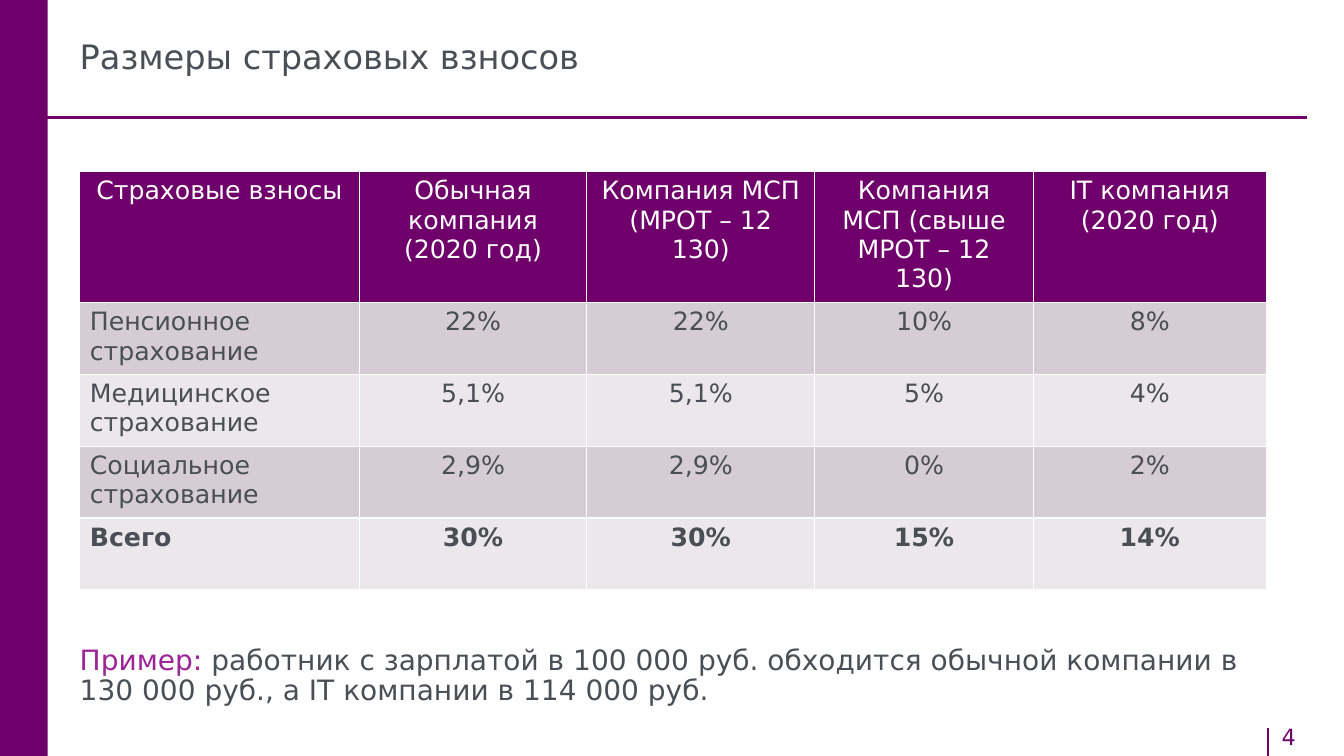
import pptx
import pptx.dml.color
import pptx.enum.shapes
import pptx.enum.text
import pptx.oxml
import pptx.oxml.ns
import pptx.util

Cm = pptx.util.Cm
Pt = pptx.util.Pt
ALIGN = pptx.enum.text.PP_ALIGN
ANCHOR = pptx.enum.text.MSO_ANCHOR

FONT = "DejaVu Sans"
COLORS = {
    "purple": "6F006B",
    "accent": "9C2498",
    "text": "494F55",
    "white": "FFFFFF",
    "band_dark": "D5CCD4",
    "band_light": "EBE7EB",
}
COLUMN_WIDTHS = [7.04, 5.74, 5.74, 5.51, 5.87]
ROW_HEIGHT = 1.81
CONTRIBUTIONS = [
    ["Страховые взносы", "Обычная компания\n(2020 год)", "Компания МСП (МРОТ – 12 130)",
     "Компания МСП (свыше МРОТ – 12 130)", "IT компания (2020 год)"],
    ["Пенсионное страхование", "22%", "22%", "10%", "8%"],
    ["Медицинское страхование", "5,1%", "5,1%", "5%", "4%"],
    ["Социальное страхование", "2,9%", "2,9%", "0%", "2%"],
    ["Всего", "30%", "30%", "15%", "14%"],
]


def rgb(name):
    return pptx.dml.color.RGBColor.from_string(COLORS[name])


def add_span(para, text, color, **formats):
    span = para.add_run()
    span.text = text
    span.font.color.rgb = rgb(color)
    for key, value in {"name": FONT, **formats}.items():
        setattr(span.font, key, value)


def add_text(page, place, spans, size, line_spacing=0.9, margin=0, anchor=ANCHOR.TOP):
    """Add a one-paragraph text box; spans is a list of (text, color)."""
    frame = page.shapes.add_textbox(*map(Cm, place)).text_frame
    formats = {"word_wrap": True, "vertical_anchor": anchor}
    for side in ("left", "top", "right", "bottom"):
        formats["margin_" + side] = Cm(margin)
    for key, value in formats.items():
        setattr(frame, key, value)
    para = frame.paragraphs[0]
    para.line_spacing = line_spacing
    for text, color in spans:
        add_span(para, text, color, size=Pt(size))


def add_bar(page, place):
    bar = page.shapes.add_shape(pptx.enum.shapes.MSO_SHAPE.RECTANGLE, *map(Cm, place))
    bar.shadow.inherit = False
    bar.fill.solid()
    bar.fill.fore_color.rgb = rgb("purple")
    bar.line.fill.background()


def add_rule(page, ends, width):
    rule = page.shapes.add_connector(pptx.enum.shapes.MSO_CONNECTOR.STRAIGHT, *map(Cm, ends))
    rule.line.color.rgb = rgb("purple")
    rule.line.width = Pt(width)
    properties = rule._element.spPr
    properties.append(pptx.oxml.parse_xml(f"<a:effectLst {pptx.oxml.ns.nsdecls('a')}/>"))


def add_borders(cell):
    properties = cell._tc.get_or_add_tcPr()
    for index, side in enumerate(("lnL", "lnR", "lnT", "lnB")):
        properties.insert(index, pptx.oxml.parse_xml(
            f'<a:{side} {pptx.oxml.ns.nsdecls("a")} w="{Pt(1)}"><a:solidFill>'
            f'<a:srgbClr val="{COLORS["white"]}"/></a:solidFill></a:{side}>'))


def fill_cell(cell, text, fill, color, bold, align):
    cell.fill.solid()
    cell.fill.fore_color.rgb = rgb(fill)
    add_borders(cell)
    frame = cell.text_frame
    for index, line in enumerate(text.split("\n")):
        para = frame.add_paragraph() if index else frame.paragraphs[0]
        para.alignment = align
        add_span(para, line, color, size=Pt(18), bold=bold)


def add_contributions_table(page, left, top):
    count = len(CONTRIBUTIONS)
    table = page.shapes.add_table(
        count, len(COLUMN_WIDTHS), Cm(left), Cm(top),
        Cm(sum(COLUMN_WIDTHS)), Cm(ROW_HEIGHT * count)).table
    for column, width in zip(table.columns, COLUMN_WIDTHS):
        column.width = Cm(width)
    for row, texts in enumerate(CONTRIBUTIONS):
        table.rows[row].height = Cm(ROW_HEIGHT)
        header = row == 0
        band = "band_dark" if row % 2 else "band_light"
        for column, text in enumerate(texts):
            fill_cell(
                table.cell(row, column), text,
                fill="purple" if header else band,
                color="white" if header else "text",
                bold=row == count - 1,
                align=ALIGN.CENTER if header or column else ALIGN.LEFT)


def main():
    deck = pptx.Presentation()
    deck.slide_width, deck.slide_height = Cm(33.87), Cm(19.05)
    page = deck.slides.add_slide(deck.slide_layouts[6])

    add_text(page, (32.05, 18.11, 1.5, 0.94), [("4", "purple")], 16,
             line_spacing=1, margin=0.25 / 2)
    page.shapes[0].text_frame.margin_left = Cm(0.25)
    add_rule(page, (31.95, 18.34, 31.95, 19.05), 1)
    add_bar(page, (-0.05, 0, 1.25, 19.05))
    add_rule(page, (0.58, 2.95, 32.94, 2.95), 2.25)
    add_text(page, (2.01, 0.56, 26.95, 1.85), [("Размеры страховых взносов", "text")], 24,
             anchor=ANCHOR.MIDDLE)
    add_text(page, (2.01, 16.28, 29.92, 1.55), [
        ("Пример: ", "accent"),
        ("работник с зарплатой в 100 000 руб. обходится обычной компании "
         "в 130 000 руб., а IT компании в 114 000 руб.", "text")], 20)
    add_contributions_table(page, 2.01, 4.32)
    deck.save("out.pptx")


if __name__ == "__main__":
    main()
